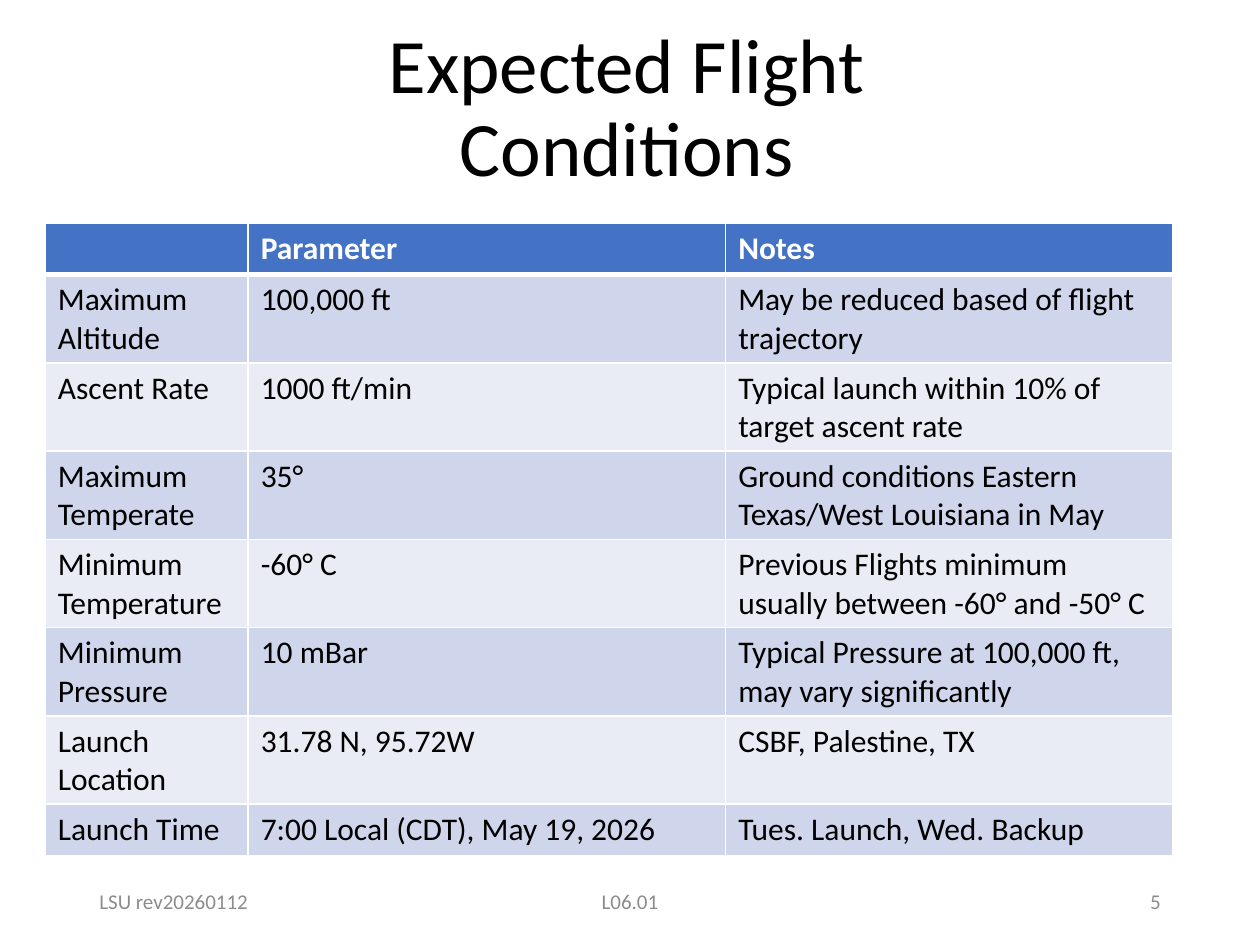
import pptx
import pptx.dml.color
import pptx.enum.text
import pptx.oxml.ns
import pptx.util
from dataclasses import dataclass
from lxml import etree

Inches = pptx.util.Inches
Pt = pptx.util.Pt
ALIGN = pptx.enum.text.PP_ALIGN
ANCHOR = pptx.enum.text.MSO_ANCHOR


@dataclass(frozen=True)
class Theme:
    font: str = "Calibri"
    text: str = "000000"
    light: str = "FFFFFF"
    muted: str = "8C8C8C"
    header: str = "4472C4"
    bands: tuple = ("CFD5EA", "E9EBF5")
    title_size: int = 44
    table_size: int = 18
    footer_size: int = 12


class SlideBuilder:
    def __init__(self, prs, theme):
        self.theme = theme
        self.s = prs.slides.add_slide(prs.slide_layouts[6])

    def style(self, p, size, color, bold=False):
        p.font.name = self.theme.font
        p.font.size = Pt(size)
        p.font.bold = bold
        p.font.color.rgb = pptx.dml.color.RGBColor.from_string(color)

    def text(self, text, box, size, color, align, spacing=None):
        sp = self.s.shapes.add_textbox(*map(Inches, box))
        tf = sp.text_frame
        tf.word_wrap = True
        tf.vertical_anchor = ANCHOR.MIDDLE
        p = tf.paragraphs[0]
        p.text = text
        p.alignment = align
        if spacing:
            p.line_spacing = spacing
        self.style(p, size, color)

    def border(self, cell, side, width):
        tag = pptx.oxml.ns.qn
        tc_pr = cell._tc.get_or_add_tcPr()
        ln = etree.SubElement(tc_pr, tag("a:ln" + side), w=str(Pt(width)))
        fill = etree.SubElement(ln, tag("a:solidFill"))
        etree.SubElement(fill, tag("a:srgbClr"), val=self.theme.light)

    def cell(self, cell, text, row):
        t = self.theme
        is_header = row == 0
        # The rule under the header is heavier than the others
        widths = {"L": 1, "R": 1, "T": 3 if row == 1 else 1, "B": 3 if is_header else 1}
        for side, width in widths.items():
            self.border(cell, side, width)
        fill = t.header if is_header else t.bands[(row - 1) % 2]
        cell.fill.solid()
        cell.fill.fore_color.rgb = pptx.dml.color.RGBColor.from_string(fill)
        p = cell.text_frame.paragraphs[0]
        if text:
            p.text = text
        self.style(p, t.table_size, t.light if is_header else t.text, is_header)

    def table(self, rows, left, top, col_widths, row_height):
        frame = self.s.shapes.add_table(
            len(rows), len(col_widths), Inches(left), Inches(top),
            Inches(sum(col_widths)), Inches(row_height * len(rows)))
        table = frame.table
        for column, width in zip(table.columns, col_widths):
            column.width = Inches(width)
        for i, values in enumerate(rows):
            table.rows[i].height = Inches(row_height)
            for j, value in enumerate(values):
                self.cell(table.cell(i, j), value, i)


CONDITIONS = [
    ("", "Parameter", "Notes"),
    ("Maximum Altitude", "100,000 ft", "May be reduced based of flight trajectory"),
    ("Ascent Rate", "1000 ft/min", "Typical launch within 10% of target ascent rate"),
    ("Maximum Temperate", "35°", "Ground conditions Eastern Texas/West Louisiana in May"),
    ("Minimum Temperature", "-60° C", "Previous Flights minimum usually between -60° and -50° C"),
    ("Minimum Pressure", "10 mBar", "Typical Pressure at 100,000 ft, may vary significantly"),
    ("Launch Location", "31.78 N, 95.72W", "CSBF, Palestine, TX"),
    ("Launch Time", "7:00 Local (CDT), May 19, 2026", "Tues. Launch, Wed. Backup"),
]

FOOTERS = [
    ("LSU rev20260112", 0.69, 2.25, ALIGN.LEFT),
    ("L06.01", 3.31, 3.38, ALIGN.CENTER),
    ("5", 7.06, 2.25, ALIGN.RIGHT),
]


def main():
    prs = pptx.Presentation()
    prs.slide_width, prs.slide_height = Inches(10), Inches(7.5)
    theme = Theme()
    slide = SlideBuilder(prs, theme)

    # Title
    slide.text("Expected Flight Conditions", (1.76, 0.15, 6.43, 1.45),
               theme.title_size, theme.text, ALIGN.CENTER, 0.9)

    # Flight conditions; rows grow to fit wrapped text
    slide.table(CONDITIONS, 0.36, 1.77, (1.61, 3.79, 3.55), 0.41)

    # Footer
    for text, left, width, align in FOOTERS:
        slide.text(text, (left, 6.95, width, 0.4), theme.footer_size, theme.muted, align)

    prs.save("out.pptx")


if __name__ == "__main__":
    main()
